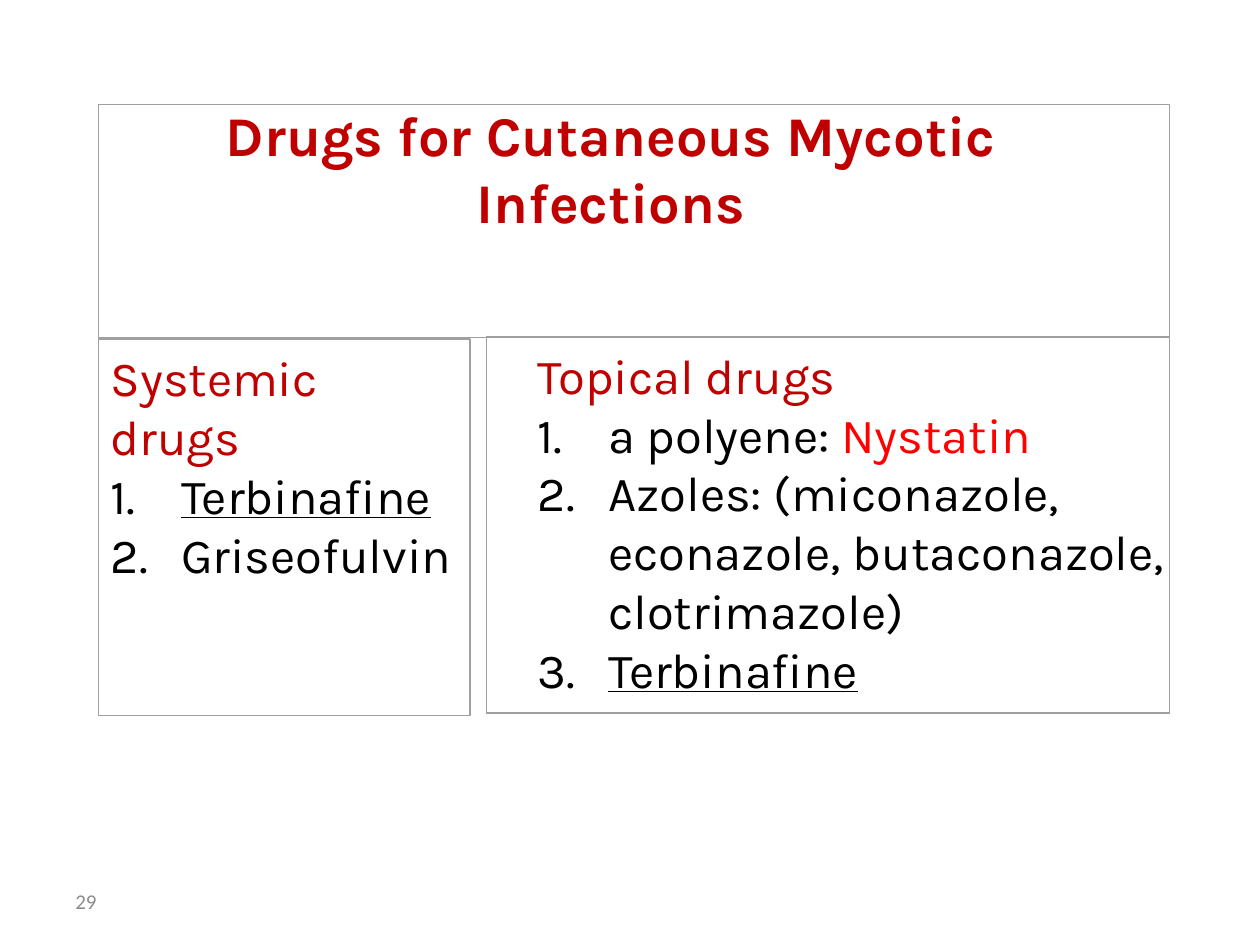
from lxml import etree
from pptx import Presentation
from pptx.dml.color import RGBColor
from pptx.enum import shapes, text
from pptx.oxml.ns import qn
from pptx.util import Inches, Pt

COLORS = {"heading": "C00000", "body": "000000", "accent": "FF0000",
          "frame": "A0A0A0", "number": "8C8C8C"}
HANG = Inches(0.56)

# left, top, width, height
FRAMES = [(0.78, 0.83, 8.5, 1.85), (0.78, 2.69, 2.95, 2.99), (3.86, 2.67, 5.42, 2.99)]

TITLE = "Drugs for Cutaneous Mycotic Infections"
TITLE_AREA = (0.66, 0.75, 8.38, 1.85)
PAGE_NUMBER = "29"
NUMBER_AREA = (0.5, 6.95, 2.33, 0.4)

# each drug is a list of (wording, colour, underlined)
COLUMNS = [
    ((0.78, 2.71, 2.95, 2.99), "Systemic drugs", [
        [("Terbinafine", "body", True)],
        [("Griseofulvin", "body", False)],
    ]),
    ((4.17, 2.69, 5.3, 2.99), "Topical drugs", [
        [("a polyene: ", "body", False), ("Nystatin", "accent", False)],
        [("Azoles: (miconazole, econazole, butaconazole, clotrimazole)", "body", False)],
        [("Terbinafine", "body", True)],
    ]),
]


def add_frame(page, area):
    frame = page.shapes.add_shape(shapes.MSO_SHAPE.RECTANGLE, *map(Inches, area))
    frame.shadow.inherit = False
    frame.fill.background()
    frame.line.color.rgb = RGBColor.from_string(COLORS["frame"])
    frame.line.width = Pt(0)


def add_box(page, area):
    box = page.shapes.add_textbox(*map(Inches, area))
    box.text_frame.word_wrap = True
    return box.text_frame


def add_span(para, wording, color, size=28, font="Karla", bold=False, underline=False):
    span = para.add_run()
    span.text = wording
    span.font.name = font
    span.font.size = Pt(size)
    span.font.bold = bold
    span.font.underline = underline
    span.font.color.rgb = RGBColor.from_string(COLORS[color])


def number_paragraph(para):
    """Turn on automatic numbering with a hanging indent."""
    properties = para._p.get_or_add_pPr()
    properties.set("marL", str(HANG))
    properties.set("indent", str(-HANG))
    etree.SubElement(properties, qn("a:buFont"), typeface="+mj-lt")
    etree.SubElement(properties, qn("a:buAutoNum"), type="arabicPeriod")


def main():
    deck = Presentation()
    deck.slide_width, deck.slide_height = Inches(10), Inches(7.5)
    page = deck.slides.add_slide(deck.slide_layouts[6])

    for area in FRAMES:
        add_frame(page, area)

    title = add_box(page, TITLE_AREA).paragraphs[0]
    title.alignment = text.PP_ALIGN.CENTER
    add_span(title, TITLE, "heading", size=32, bold=True)

    for area, heading, drugs in COLUMNS:
        column = add_box(page, area)
        add_span(column.paragraphs[0], heading, "heading")
        for drug in drugs:
            para = column.add_paragraph()
            number_paragraph(para)
            for wording, color, underline in drug:
                add_span(para, wording, color, underline=underline)

    number = add_box(page, NUMBER_AREA)
    number.vertical_anchor = text.MSO_ANCHOR.MIDDLE
    add_span(number.paragraphs[0], PAGE_NUMBER, "number", size=12, font="Calibri")

    deck.save("out.pptx")


if __name__ == "__main__":
    main()
